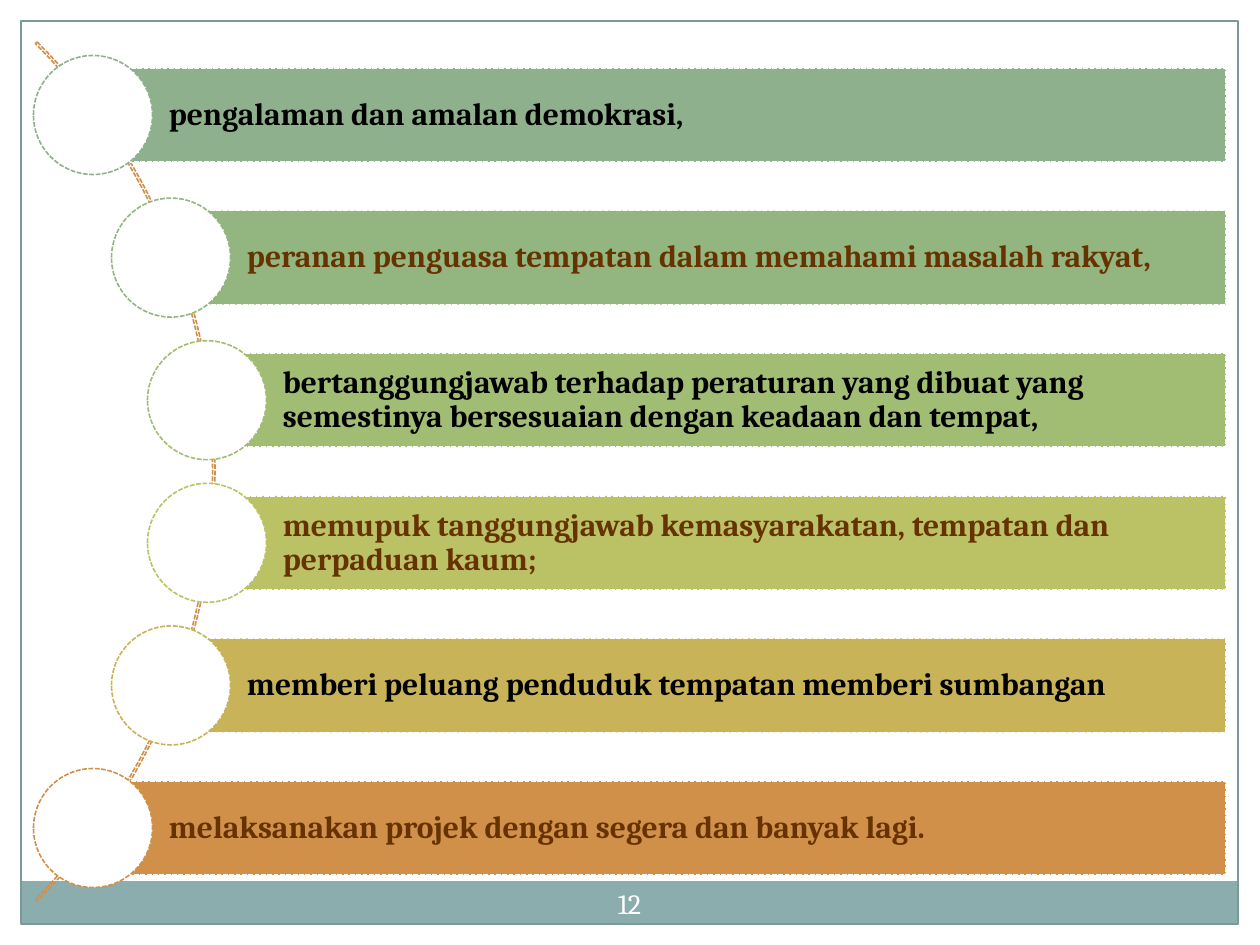
import pptx
import pptx.util
import pptx.dml.color
import pptx.enum.dml
import pptx.enum.shapes
import pptx.enum.text

SCALE = 914400 / 126
KIND = pptx.enum.shapes.MSO_SHAPE
ALIGN = pptx.enum.text.PP_ALIGN
FONT = "Cambria"

# Text, bar left, bar colour, text colour
ITEMS = [
    ("pengalaman dan amalan demokrasi,", 93, "8FB08C", "000000"),
    ("peranan penguasa tempatan dalam memahami masalah rakyat,",
     171, "93B580", "663300"),
    ("bertanggungjawab terhadap peraturan yang dibuat yang semestinya "
     "bersesuaian dengan keadaan dan tempat,", 207, "A1BC73", "000000"),
    ("memupuk tanggungjawab kemasyarakatan, tempatan dan perpaduan kaum;",
     207, "BBC265", "663300"),
    ("memberi peluang penduduk tempatan memberi sumbangan",
     171, "C9B358", "000000"),
    ("melaksanakan projek dengan segera dan banyak lagi.",
     93, "D19049", "663300"),
]


def px(size):
    return pptx.util.Emu(round(size * SCALE))


def color(code):
    return pptx.dml.color.RGBColor.from_string(code)


def draw(slide, kind, box, fill=None, line=None, width=0.9, dash=True):
    shape = slide.shapes.add_shape(kind, *map(px, box))
    shape.shadow.inherit = False
    if fill:
        shape.fill.solid()
        shape.fill.fore_color.rgb = color(fill)
    else:
        shape.fill.background()
    if line:
        shape.line.color.rgb = color(line)
        shape.line.width = pptx.util.Pt(width)
        if dash:
            shape.line.dash_style = pptx.enum.dml.MSO_LINE.SQUARE_DOT
    else:
        shape.line.fill.background()
    return shape


def write(shape, text, size, code, align, bold=False, inset=6):
    frame = shape.text_frame
    frame.word_wrap = True
    frame.vertical_anchor = pptx.enum.text.MSO_ANCHOR.MIDDLE
    frame.margin_left = px(inset)
    frame.margin_right = frame.margin_top = frame.margin_bottom = px(6)
    para = frame.paragraphs[0]
    para.alignment = align
    run = para.add_run()
    run.text = text
    run.font.name = FONT
    run.font.size = pptx.util.Pt(size)
    run.font.bold = bold
    run.font.color.rgb = color(code)
    return para


def add_frame(slide, box):
    left, top, width, height = box
    # Footer band, border and page number
    draw(slide, KIND.RECTANGLE, (left, top + height - 43, width, 43), "8CADAE")
    draw(slide, KIND.RECTANGLE, box, line="7C999A", width=0.75, dash=False)
    num = slide.shapes.add_textbox(
        px(left + width / 2 - 42), px(top + height - 51), px(84), px(60))
    write(num, "12", 16, "FFFFFF", ALIGN.CENTER)


def add_item(slide, box, text, fill, ink):
    left, top, width, height = box
    bar = draw(slide, KIND.RECTANGLE, box, fill, "FFFFFF")
    para = write(bar, text, 18, ink, ALIGN.LEFT, True, 76)
    para.line_spacing = 0.9
    # Circle centred on the bar's left edge
    size = 119
    spot = (left - size / 2, top + (height - size) / 2, size, size)
    draw(slide, KIND.OVAL, spot, "FFFFFF", fill)


def add_list(slide, box):
    left, top, width, height = box
    # Thin arc behind the circles, from -45 to 45 degrees
    size = 1215
    arc = draw(slide, KIND.BLOCK_ARC,
               (left - 1034, top + (height - size) / 2, size, size),
               line="D19049")
    for i, value in enumerate((189, 27, 0.002)):
        arc.adjustments[i] = value
    # Evenly spaced bars that share a right edge
    tall = 94
    step = (height - tall) / (len(ITEMS) - 1)
    for i, (text, start, fill, ink) in enumerate(ITEMS):
        spot = (start, top + i * step, left + width - start, tall)
        add_item(slide, spot, text, fill, ink)


def main():
    deck = pptx.Presentation()
    deck.slide_width, deck.slide_height = px(1260), px(945)
    slide = deck.slides.add_slide(deck.slide_layouts[6])
    add_frame(slide, (21, 21, 1217, 903))
    add_list(slide, (34, 68, 1192, 807))
    deck.save("out.pptx")


if __name__ == "__main__":
    main()
